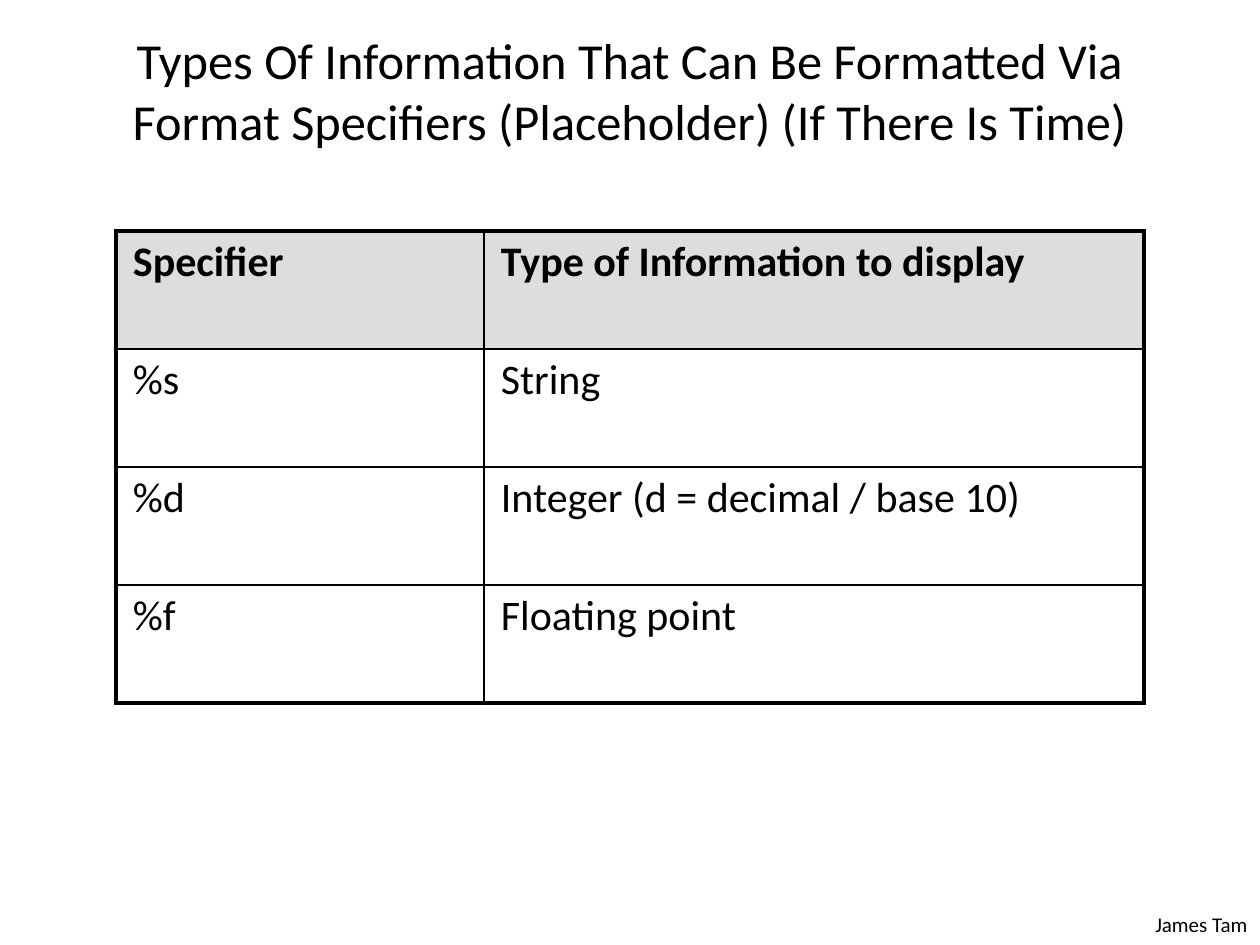
from dataclasses import dataclass

from lxml.etree import SubElement
from pptx import Presentation
from pptx.dml.color import RGBColor
from pptx.enum.text import MSO_ANCHOR, MSO_AUTO_SIZE, PP_ALIGN
from pptx.oxml.ns import qn
from pptx.util import Emu, Pt

PX = 914400 // 126


@dataclass(frozen=True)
class Theme:
    font: str = "Calibri"
    ink: str = "000000"
    header_fill: str = "DDDDDD"
    body_fill: str = "FFFFFF"
    title_size: float = 28.8
    table_size: float = 24
    footer_size: float = 12
    outer_line: float = 2.25
    inner_line: float = 1


THEME = Theme()

ROWS = [
    ("Specifier", "Type of Information to display"),
    ("%s", "String"),
    ("%d", "Integer (d = decimal / base 10)"),
    ("%f", "Floating point"),
]


def px(n):
    return Emu(n * PX)


def format_text(tf, size, align=PP_ALIGN.LEFT, bold=False):
    for p in tf.paragraphs:
        p.alignment = align
        for r in p.runs:
            r.font.name = THEME.font
            r.font.size = Pt(size)
            r.font.bold = bold
            r.font.color.rgb = RGBColor.from_string(THEME.ink)


def set_title(s, text, left, top, width, height):
    sp = s.shapes.title
    sp.left, sp.top, sp.width, sp.height = map(px, (left, top, width, height))
    tf = sp.text_frame
    tf.text = text
    tf.word_wrap = True
    tf.auto_size = MSO_AUTO_SIZE.NONE
    tf.vertical_anchor = MSO_ANCHOR.MIDDLE
    tf.margin_top, tf.margin_bottom = px(9), 0
    format_text(tf, THEME.title_size, PP_ALIGN.CENTER)


def add_footer(s, text, left, top, width, height):
    tf = s.shapes.add_textbox(*map(px, (left, top, width, height))).text_frame
    tf.text = text
    tf.word_wrap = True
    format_text(tf, THEME.footer_size, PP_ALIGN.RIGHT)


def set_borders(cell, outer_edges):
    tcPr = cell._tc.get_or_add_tcPr()
    for tag, outer in zip(("lnL", "lnR", "lnT", "lnB"), outer_edges):
        width = THEME.outer_line if outer else THEME.inner_line
        ln = SubElement(tcPr, qn(f"a:{tag}"), w=str(Pt(width)))
        fill = SubElement(ln, qn("a:solidFill"))
        SubElement(fill, qn("a:srgbClr"), val=THEME.ink)


def add_table(s, rows, left, top, col_widths, row_height):
    last_row, last_col = len(rows) - 1, len(col_widths) - 1
    table = s.shapes.add_table(
        len(rows), len(col_widths), px(left), px(top),
        px(sum(col_widths)), px(row_height * len(rows))).table
    for col, width in zip(table.columns, col_widths):
        col.width = px(width)
    for i, row in enumerate(rows):
        table.rows[i].height = px(row_height)
        for j, text in enumerate(row):
            cell = table.cell(i, j)
            cell.text = text
            cell.margin_left = cell.margin_right = px(17)
            cell.margin_top = cell.margin_bottom = px(6)
            set_borders(cell, (j == 0, j == last_col, i == 0, i == last_row))
            cell.fill.solid()
            cell.fill.fore_color.rgb = RGBColor.from_string(
                THEME.header_fill if i == 0 else THEME.body_fill)
            format_text(cell.text_frame, THEME.table_size, bold=i == 0)


def main():
    prs = Presentation()
    prs.slide_width, prs.slide_height = px(1260), px(945)
    s = prs.slides.add_slide(prs.slide_layouts[5])
    add_footer(s, "James Tam", 1092, 905, 168, 38)
    set_title(s, "Types Of Information That Can Be Formatted Via Format "
                 "Specifiers (Placeholder) (If There Is Time)",
              63, 35, 1134, 101)
    add_table(s, ROWS, 116, 231, (368, 660), 118)
    prs.save("out.pptx")


if __name__ == "__main__":
    main()
